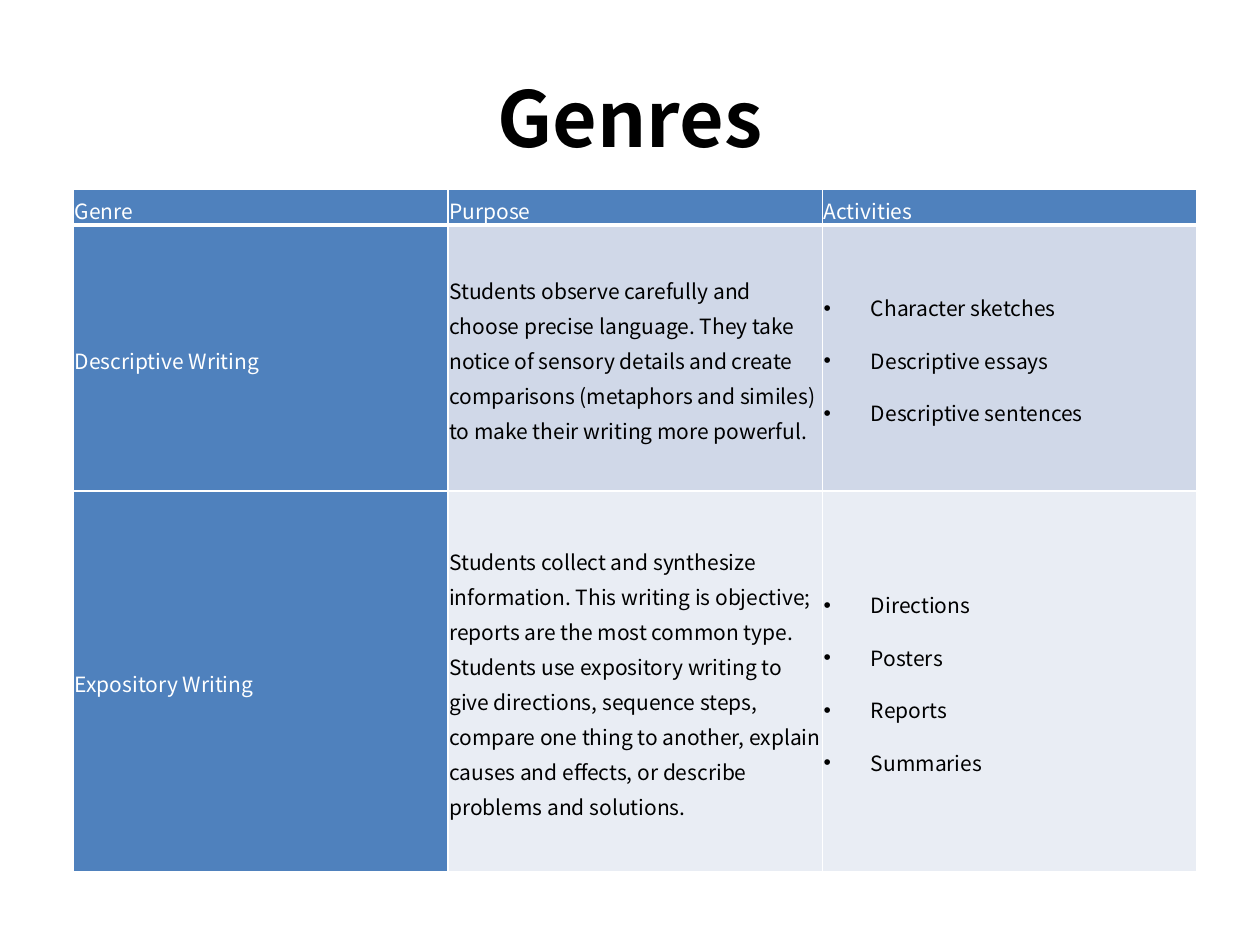
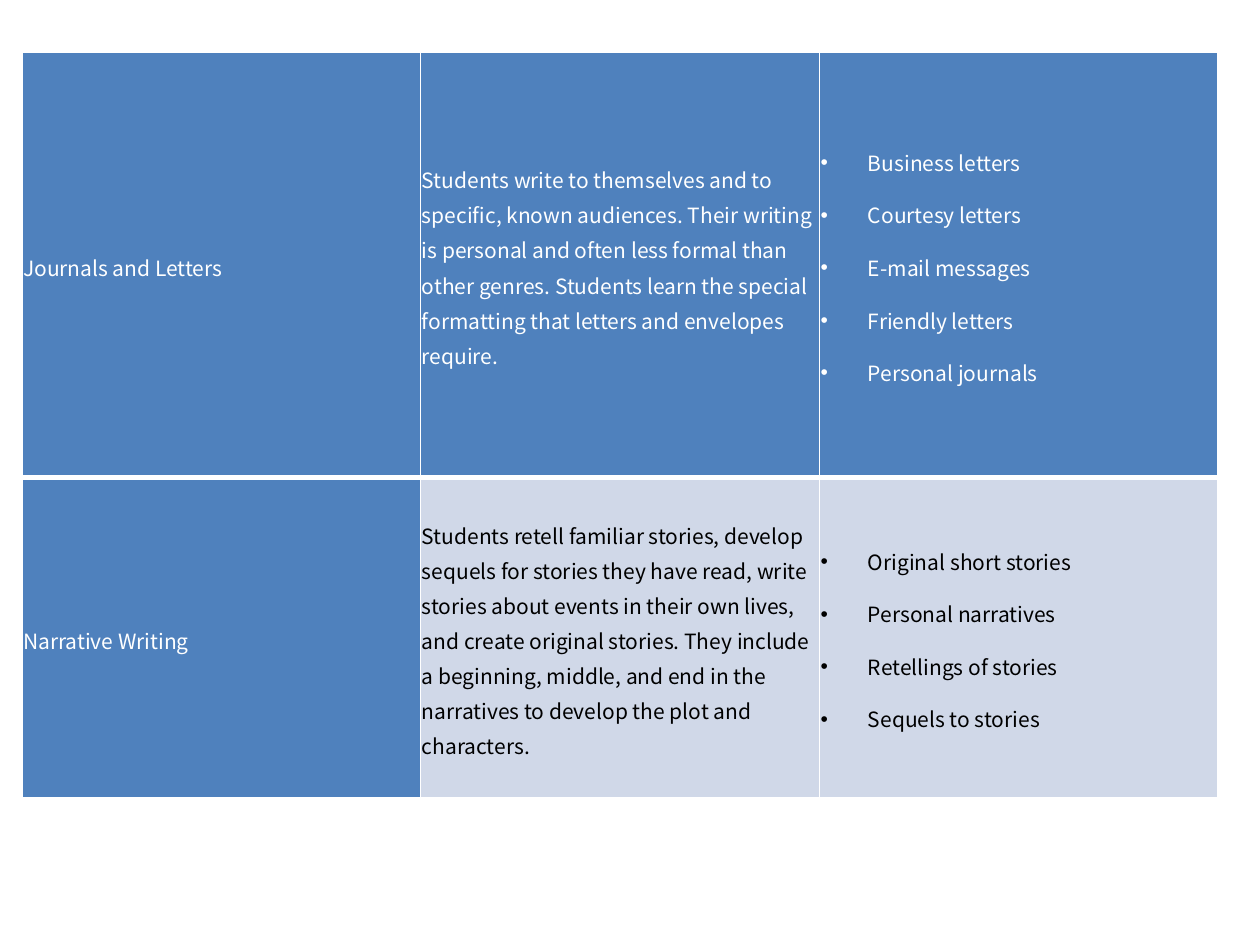
"""Build two slides of tables that list writing genres, their purposes and activities."""
from lxml.etree import SubElement
from pptx import Presentation
from pptx.dml.color import RGBColor as Color
from pptx.enum.text import MSO_ANCHOR as Anchor, PP_ALIGN as Align
from pptx.oxml import parse_xml
from pptx.oxml.ns import nsdecls, qn
from pptx.util import Pt

COLORS = {"header": "4F81BD", "odd": "D0D8E8", "even": "E9EDF4", "white": "FFFFFF", "black": "000000"}
FONT = "Noto Sans CJK KR"
INSET = Pt(0.72)
CELL_FORMAT = {"margin_left": INSET, "margin_right": INSET, "margin_top": INSET,
               "margin_bottom": INSET, "vertical_anchor": Anchor.MIDDLE}
LINE_FORMAT = {"line_spacing": 1.15}
BULLET_FORMAT = {"line_spacing": 1.15, "space_after": Pt(10)}
BULLET_INDENT, TAB_STOP = Pt(27), Pt(36)

GENRES = [
    ["Genre", "Purpose", "Activities"],
    ["Descriptive Writing",
     "Students observe carefully and choose precise language. They take notice of sensory details "
     "and create comparisons (metaphors and similes) to make their writing more powerful.",
     ["Character sketches", "Descriptive essays", "Descriptive sentences"]],
    ["Expository Writing",
     "Students collect and synthesize information. This writing is objective; reports are the most "
     "common type. Students use expository writing to give directions, sequence steps, compare one "
     "thing to another, explain causes and effects, or describe problems and solutions.",
     ["Directions", "Posters", "Reports", "Summaries"]],
]
MORE_GENRES = [
    ["Journals and Letters",
     "Students write to themselves and to specific, known audiences. Their writing is personal and "
     "often less formal than other genres. Students learn the special formatting that letters and "
     "envelopes require.",
     ["Business letters", "Courtesy letters", "E-mail messages", "Friendly letters", "Personal journals"]],
    ["Narrative Writing",
     "Students retell familiar stories, develop sequels for stories they have read, write stories "
     "about events in their own lives, and create original stories. They include a beginning, middle, "
     "and end in the narratives to develop the plot and characters.",
     ["Original short stories", "Personal narratives", "Retellings of stories", "Sequels to stories"]],
]


def set_format(target, values):
    for name, value in values.items():
        setattr(target, name, value)


class GenreDeck:
    def __init__(self):
        self.deck = Presentation()
        set_format(self.deck, {"slide_width": Pt(720), "slide_height": Pt(540)})
        self.page = None

    def add_page(self):
        self.page = self.deck.slides.add_slide(self.deck.slide_layouts[6])

    def add_span(self, para, text, color, size=12, bold=False):
        span = para.add_run()
        span.text = text
        set_format(span.font, {"name": FONT, "size": Pt(size), "bold": bold})
        span.font.color.rgb = Color.from_string(COLORS[color])

    def add_title(self, text):
        box = self.page.shapes.add_textbox(Pt(36), Pt(21.6), Pt(648), Pt(90))
        set_format(box.text_frame, {"word_wrap": True, "vertical_anchor": Anchor.MIDDLE})
        para = box.text_frame.paragraphs[0]
        para.alignment = Align.CENTER
        self.add_span(para, text, "black", 44, True)

    def add_bullet(self, para):
        props = para._p.get_or_add_pPr()
        props.set("marL", str(BULLET_INDENT))
        props.set("indent", str(-BULLET_INDENT))
        SubElement(props, qn("a:buFont"), typeface="Arial")
        SubElement(props, qn("a:buChar"), char="•")
        tabs = SubElement(props, qn("a:tabLst"))
        SubElement(tabs, qn("a:tab"), pos=str(TAB_STOP), algn="l")

    def add_borders(self, cell, bottom):
        props = cell._tc.get_or_add_tcPr()
        widths = {"lnL": 1, "lnR": 1, "lnT": 1, "lnB": bottom}
        for place, (side, width) in enumerate(widths.items()):
            props.insert(place, parse_xml(
                f'<a:{side} {nsdecls("a")} w="{Pt(width)}"><a:solidFill>'
                f'<a:srgbClr val="{COLORS["white"]}"/></a:solidFill></a:{side}>'))

    def fill_cell(self, cell, content, row, column):
        is_header = row == 0 or column == 0
        band = "header" if is_header else "odd" if row % 2 else "even"
        set_format(cell, CELL_FORMAT)
        cell.fill.solid()
        cell.fill.fore_color.rgb = Color.from_string(COLORS[band])
        self.add_borders(cell, 3 if row == 0 else 1)
        bulleted = isinstance(content, list)
        for index, line in enumerate(content if bulleted else [content]):
            frame = cell.text_frame
            para = frame.add_paragraph() if index else frame.paragraphs[0]
            set_format(para, BULLET_FORMAT if bulleted else LINE_FORMAT)
            if bulleted:
                self.add_bullet(para)
            self.add_span(para, line, "white" if is_header else "black")

    def add_table(self, rows, left, top, column_width, heights):
        columns = len(rows[0])
        table = self.page.shapes.add_table(
            len(rows), columns, Pt(left), Pt(top), Pt(column_width * columns), Pt(sum(heights))).table
        set_format(table, {"first_row": False, "horz_banding": False})
        for column in table.columns:
            column.width = Pt(column_width)
        for row, (contents, height) in enumerate(zip(rows, heights)):
            table.rows[row].height = Pt(height)
            for column, content in enumerate(contents):
                self.fill_cell(table.cell(row, column), content, row, column)


def main():
    genres = GenreDeck()
    genres.add_page()
    genres.add_title("Genres")
    genres.add_table(GENRES, 42, 108.2, 214, [20.4, 152, 217.5])
    genres.add_page()
    genres.add_table(MORE_GENRES, 12.5, 30, 227.9, [243, 182.9])
    genres.deck.save("out.pptx")


if __name__ == "__main__":
    main()
